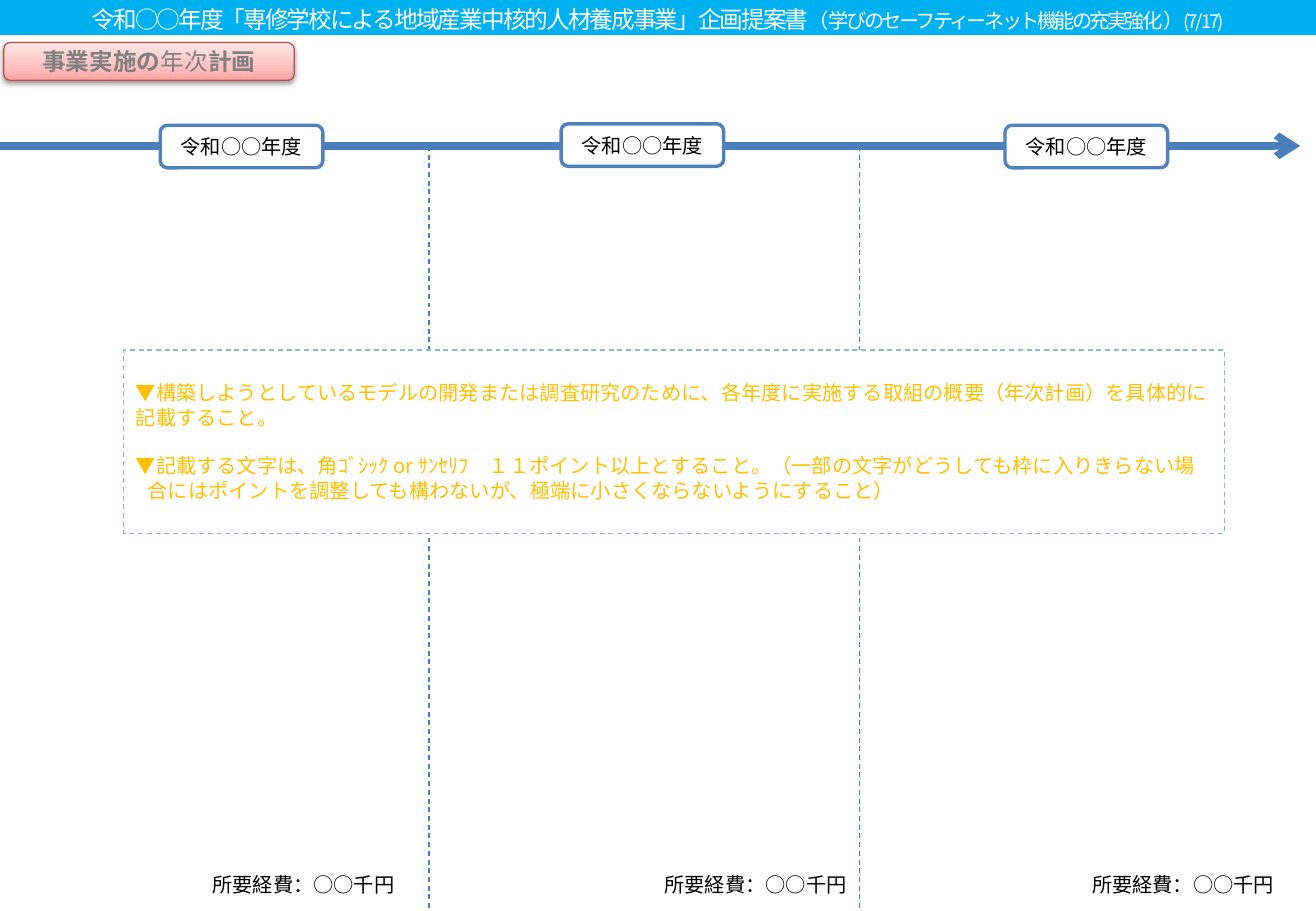
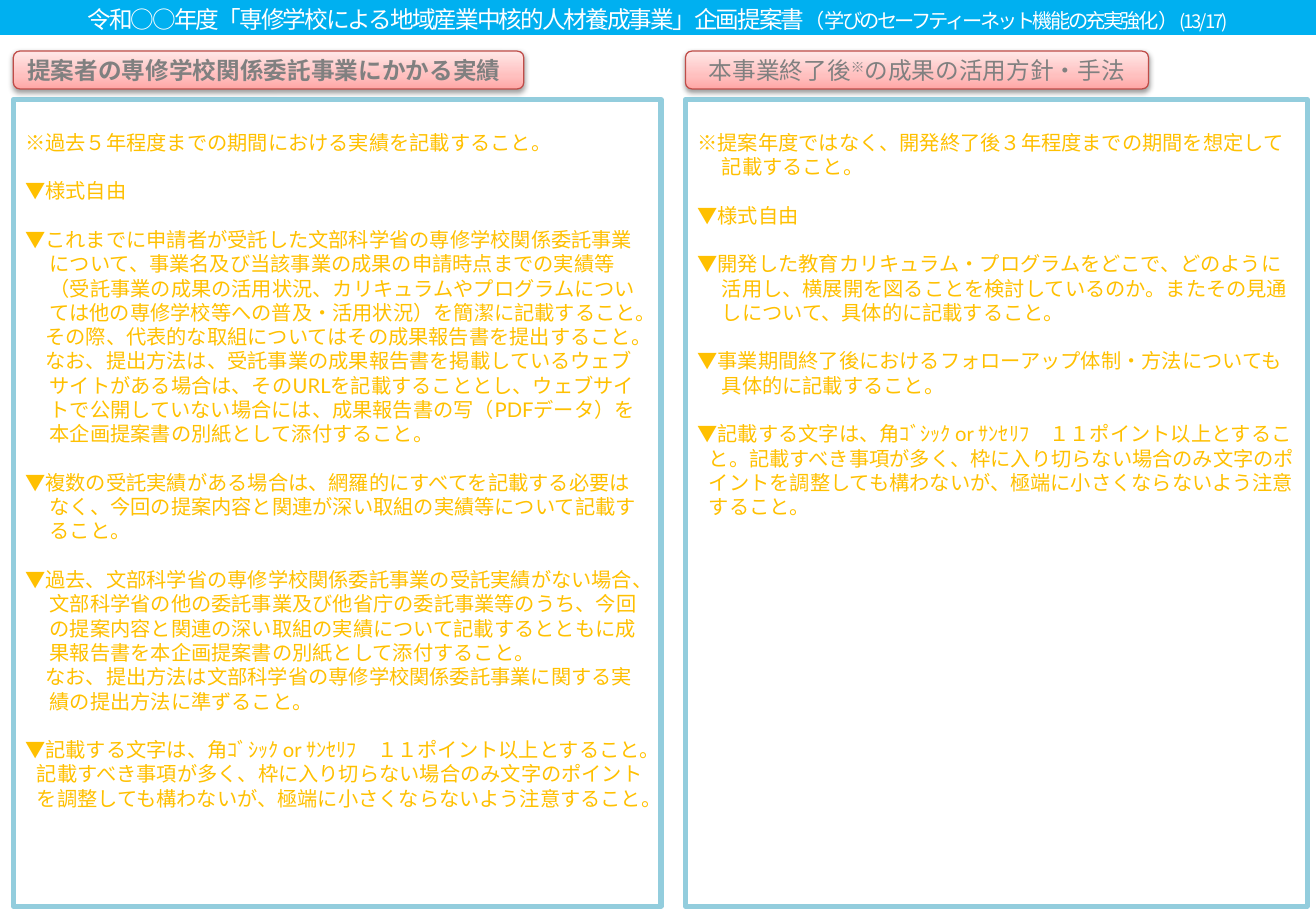
"""Build two pages of a project proposal form."""
from copy import deepcopy
from dataclasses import dataclass

from lxml.etree import SubElement
from pptx import Presentation
from pptx.dml.color import RGBColor
from pptx.enum.dml import MSO_LINE
from pptx.enum.shapes import MSO_CONNECTOR, MSO_SHAPE
from pptx.enum.text import MSO_ANCHOR, PP_ALIGN
from pptx.oxml.ns import qn
from pptx.shapes.autoshape import Shape
from pptx.shapes.connector import Connector
from pptx.slide import Slide
from pptx.util import Cm, Pt

HUES = {
    "band": "00B0F0", "white": "FFFFFF", "black": "000000", "gray": "808080",
    "gold": "FFC000", "axis": "4B7EBC", "year": "4F81BD", "note": "8EB4E3",
    "panel": "93CDDD", "rim": "BF4C48", "low": "FFA6A5", "mid": "FFC0BF",
    "high": "FFE7E7",
}
LATO = "Lato"
NOTO = "Noto Sans CJK JP"
WIDE, HIGH = 27.51, 19.05
LEAD = 14.4
AXIS = 3.05


@dataclass
class Run:
    text: str
    font: str = LATO
    size: float = 12
    hue: str = "gold"
    bold: bool = False
    track: int = 0
    base: int = 0


@dataclass
class Para:
    runs: list[Run]
    gap: bool = False
    left: float = 0
    first: float = 0
    align: PP_ALIGN = PP_ALIGN.LEFT
    lead: float | None = None


@dataclass
class Box:
    left: float
    top: float
    width: float
    height: float


@dataclass
class Panel:
    box: Box
    tag: Box
    head: Para
    body: list[Para]


def color(hue: str) -> RGBColor:
    return RGBColor.from_string(HUES[hue])


def write(shape: Shape, paras: list[Para], anchor: MSO_ANCHOR = MSO_ANCHOR.MIDDLE,
          inset: float = 0.13) -> None:
    frame = shape.text_frame
    frame.word_wrap = True
    frame.vertical_anchor = anchor
    frame.margin_top = Cm(inset)
    for spot, para in enumerate(paras):
        line = frame.add_paragraph() if spot else frame.paragraphs[0]
        line.alignment = para.align
        if para.lead:
            line.line_spacing = Pt(para.lead)
        if para.gap:
            line.space_before = Pt(LEAD)
        if para.left:
            props = line._p.get_or_add_pPr()
            props.set("marL", str(Cm(para.left)))
            props.set("indent", str(Cm(para.first)))
        for part in para.runs:
            run = line.add_run()
            run.text = part.text
            run.font.name = part.font
            run.font.size = Pt(part.size)
            run.font.bold = part.bold
            run.font.color.rgb = color(part.hue)
            if part.track:
                run.font._element.set("spc", str(part.track))
            if part.base:
                run.font._element.set("baseline", str(part.base))


def block(slide: Slide, kind: MSO_SHAPE, box: Box, fill: str | None = None,
          edge: str | None = None, width: float = 0.75) -> Shape:
    shape = slide.shapes.add_shape(
        kind, Cm(box.left), Cm(box.top), Cm(box.width), Cm(box.height))
    shape.shadow.inherit = False
    if fill:
        shape.fill.solid()
        shape.fill.fore_color.rgb = color(fill)
    else:
        shape.fill.background()
    if edge:
        shape.line.color.rgb = color(edge)
        shape.line.width = Pt(width)
    else:
        shape.line.fill.background()
    return shape


def label(slide: Slide, box: Box, para: Para) -> None:
    shape = slide.shapes.add_textbox(
        Cm(box.left), Cm(box.top), Cm(box.width), Cm(box.height))
    write(shape, [para])


def rule(slide: Slide, start: tuple[float, float], end: tuple[float, float],
         width: float) -> Connector:
    line = slide.shapes.add_connector(
        MSO_CONNECTOR.STRAIGHT, *map(Cm, start), *map(Cm, end))
    line.line.color.rgb = color("axis")
    line.line.width = Pt(width)
    SubElement(line._element.spPr, qn("a:effectLst"))
    return line


def badge(slide: Slide, box: Box, para: Para) -> None:
    shape = block(slide, MSO_SHAPE.ROUNDED_RECTANGLE, box, edge="rim")
    shape.fill.gradient()
    shape.fill.gradient_angle = 90
    props = shape._element.spPr
    stops = props.find(qn("a:gradFill")).find(qn("a:gsLst"))
    stops.insert(1, deepcopy(stops[0]))
    for stop, hue, place in zip(shape.fill.gradient_stops,
                                ("low", "mid", "high"), (0, 0.35, 1)):
        stop.color.rgb = color(hue)
        stop.position = place
    shade = SubElement(
        props.find(qn("a:effectLst")), qn("a:outerShdw"), blurRad=str(Pt(3.1)),
        dist=str(Pt(1.6)), dir="5400000", rotWithShape="0")
    tint = SubElement(shade, qn("a:srgbClr"), val=HUES["black"])
    SubElement(tint, qn("a:alpha"), val="38000")
    write(shape, [para])


def banner(slide: Slide, page: str) -> None:
    block(slide, MSO_SHAPE.RECTANGLE, Box(0, 0, WIDE, 0.73), "band")
    parts = [
        ("令和○○年度「専修学校による地域産業中核的人材養成事業」企画提案書", 14, -120),
        ("（", 12, -120),
        ("学びのセーフティーネット機能の充実強化", 12, -160),
        ("）", 12, -120),
        (page, 11, -120),
    ]
    runs = [Run(text, NOTO, size, "white", track=track)
            for text, size, track in parts]
    label(slide, Box(0, -0.03, WIDE, 0.86), Para(runs, align=PP_ALIGN.CENTER))


def item(text: str, left: float = 0.51, first: float | None = None,
         gap: bool = True, font: str = LATO) -> Para:
    return Para([Run(text, font)], gap, left, -left if first is None else first,
                lead=LEAD)


def title(*runs: Run, align: PP_ALIGN = PP_ALIGN.CENTER) -> Para:
    return Para(list(runs), align=align)


def head(text: str, bold: bool = False, base: int = 0) -> Run:
    return Run(text, LATO if bold else NOTO, 14, "gray", bold, base=base)


FONTS = "▼記載する文字は、角ｺﾞｼｯｸ or ｻﾝｾﾘﾌ　１１ポイント以上とすること。"
TOPIC = "記載すべき事項"
LIMIT = ("が多く、枠に入り切らない場合のみ文字のポイントを調整しても構わないが、"
         "極端に小さくならないよう注意すること。")

PLAN = [
    item("▼構築しようとしているモデルの開発または調査研究のために、各年度に実施する"
         "取組の概要（年次計画）を具体的に記載すること。", 0, gap=False, font=NOTO),
    item(FONTS + "（一部の文字がどうしても枠に入りきらない場合にはポイントを調整しても"
         "構わないが、極端に小さくならないようにすること）", 0.25, font=NOTO),
]

PANELS = [
    Panel(
        Box(0.28, 2.08, 13.54, 16.87), Box(0.28, 1.07, 10.67, 0.79),
        title(head("提案者の専修学校関係委託事業にかかる実績", True),
              align=PP_ALIGN.LEFT),
        [
            item("※過去５年程度までの期間における実績を記載すること。", 0, gap=False),
            item("▼様式自由", 0),
            item("▼これまでに申請者が受託した文部科学省の専修学校関係委託事業について、"
                 "事業名及び当該事業の成果の申請時点までの実績等（受託事業の成果の活用状況、"
                 "カリキュラムやプログラムについては他の専修学校等への普及・活用状況）を"
                 "簡潔に記載すること。"),
            item("その際、代表的な取組についてはその成果報告書を提出すること。",
                 first=-0.09, gap=False),
            item("なお、提出方法は、受託事業の成果報告書を掲載しているウェブサイトがある"
                 "場合は、そのURLを記載することとし、ウェブサイトで公開していない場合には、"
                 "成果報告書の写（PDFデータ）を本企画提案書の別紙として添付すること。",
                 first=-0.09, gap=False),
            item("▼複数の受託実績がある場合は、網羅的にすべてを記載する必要はなく、"
                 "今回の提案内容と関連が深い取組の実績等について記載すること。"),
            item("▼過去、文部科学省の専修学校関係委託事業の受託実績がない場合、文部科学省の"
                 "他の委託事業及び他省庁の委託事業等のうち、今回の提案内容と関連の深い取組の"
                 "実績について記載するとともに成果報告書を本企画提案書の別紙として"
                 "添付すること。"),
            item("なお、提出方法は文部科学省の専修学校関係委託事業に関する実績の提出方法に"
                 "準ずること。", first=-0.09, gap=False),
            Para([Run(FONTS), Run(TOPIC, NOTO), Run(LIMIT)], True, 0.24, -0.24,
                 lead=LEAD),
        ]),
    Panel(
        Box(14.33, 2.08, 13, 16.87), Box(14.33, 1.07, 9.68, 0.79),
        title(head("本事業終了後"), head("※", base=30000),
              head("の成果の活用方針・手法")),
        [
            item("※提案年度ではなく、開発終了後３年程度までの期間を想定して記載すること。",
                 gap=False),
            item("▼様式自由", 0),
            item("▼開発した教育カリキュラム・プログラムをどこで、どのように活用し、"
                 "横展開を図ることを検討しているのか。またその見通しについて、"
                 "具体的に記載すること。"),
            item("▼事業期間終了後におけるフォローアップ体制・方法についても具体的に"
                 "記載すること。"),
            item(FONTS + TOPIC + LIMIT, 0.24),
        ]),
]


def yearly(slide: Slide) -> None:
    badge(slide, Box(0.08, 0.89, 6.07, 0.79),
          title(head("事業実施の", True), head("年次"), head("計画", True)))
    for left in (8.97, 17.96):
        line = rule(slide, (left, AXIS), (left, HIGH), 0.75)
        line.line.dash_style = MSO_LINE.DASH
    arrow = rule(slide, (0, AXIS), (27.18, AXIS), 4.5)
    SubElement(arrow.line._get_or_add_ln(), qn("a:tailEnd"), type="arrow")
    for left, top in ((3.35, 2.62), (11.73, 2.59), (21.01, 2.62)):
        year = block(slide, MSO_SHAPE.ROUNDED_RECTANGLE,
                     Box(left, top, 3.4, 0.89), "white", "year", 2)
        write(year, [title(Run("令和○○年度", hue="black"))])
    note = block(slide, MSO_SHAPE.RECTANGLE, Box(2.59, 7.32, 23.01, 3.84),
                 "white", "note")
    note.line.dash_style = MSO_LINE.DASH
    write(note, PLAN, MSO_ANCHOR.TOP, 0.64)
    for left in (4.19, 13.64, 22.58):
        label(slide, Box(left, 18, 4.5, 1),
              Para([Run("所要経費：○○千円", NOTO, hue="black")]))


def results(slide: Slide) -> None:
    for panel in PANELS:
        frame = block(slide, MSO_SHAPE.RECTANGLE, panel.box, edge="panel", width=3)
        write(frame, panel.body, MSO_ANCHOR.TOP, 0.64)
        badge(slide, panel.tag, panel.head)


def main() -> None:
    deck = Presentation()
    deck.slide_width, deck.slide_height = Cm(WIDE), Cm(HIGH)
    for page, draw in (("(7/17)", yearly), ("(13/17)", results)):
        slide = deck.slides.add_slide(deck.slide_layouts[6])
        draw(slide)
        banner(slide, page)
    deck.save("out.pptx")


if __name__ == "__main__":
    main()
